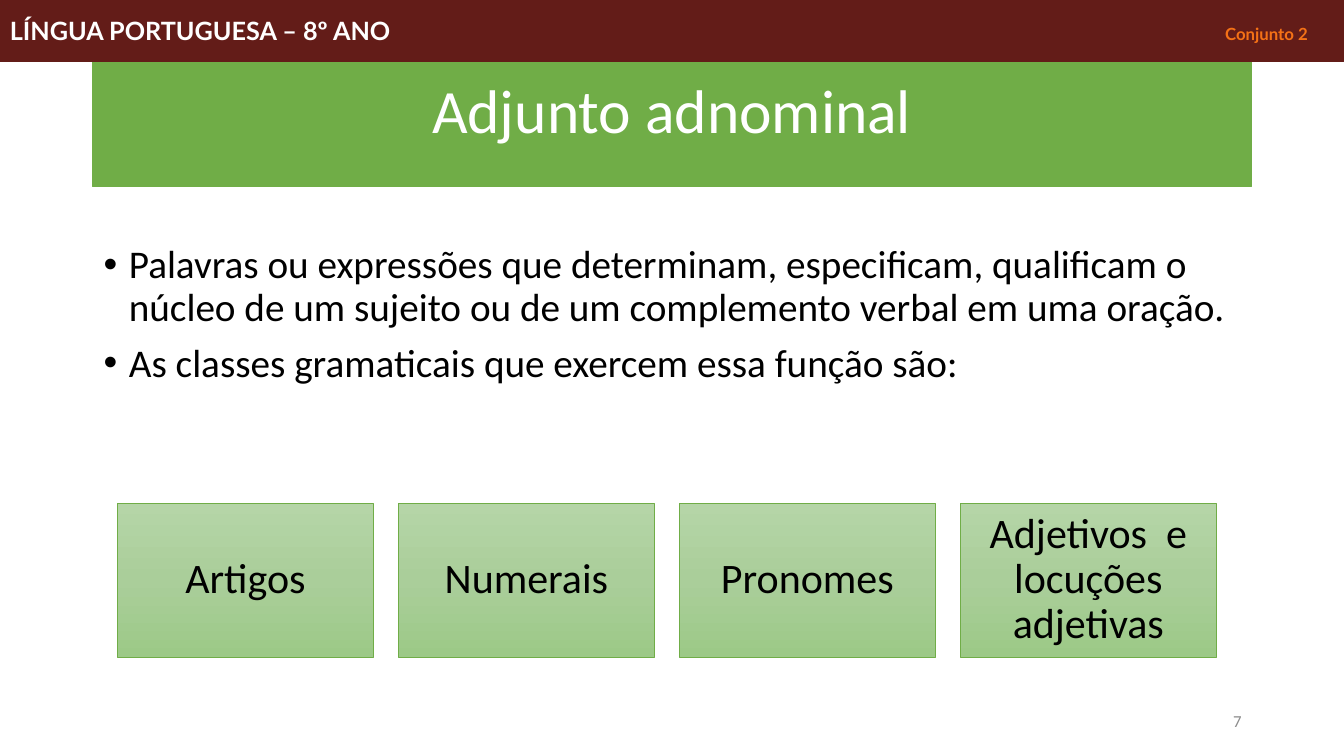
from copy import deepcopy
from dataclasses import dataclass

from lxml import etree
from pptx import Presentation
from pptx.dml.color import RGBColor
from pptx.enum import shapes, text
from pptx.oxml.ns import qn
from pptx.util import Pt

ALIGN = text.PP_ALIGN
ANCHOR = text.MSO_ANCHOR


@dataclass(frozen=True)
class Theme:
    font: str = "Calibri"
    header_font: str = "Lato"
    green: str = "70AD47"
    card_gradient: tuple = ("B5D5A7", "AACE9A", "9CC987")
    maroon: str = "631C18"
    orange: str = "F47116"
    white: str = "FFFFFF"
    black: str = "000000"
    grey: str = "8C8C8C"
    title_size: float = 44
    card_size: float = 30
    body_size: float = 28
    header_size: float = 18
    small_size: float = 12


@dataclass(frozen=True)
class Box:
    left: float
    top: float
    width: float
    height: float

    def points(self) -> tuple:
        return Pt(self.left), Pt(self.top), Pt(self.width), Pt(self.height)


THEME = Theme()
TITLE = Box(66, 28.8, 828, 104.4)
BODY = Box(67, 171.4, 828, 166.3)
FIRST_CARD = Box(84, 359.2, 182.7, 110)
CARD_PITCH = 200.7
PAGE_NUMBER = Box(678, 500.4, 216, 28.8)
HEADER = Box(0, 0, 960, 44)
SET_LABEL_TAB = 868

BULLETS = (
    "Palavras ou expressões que determinam, especificam, qualificam o "
    "núcleo de um sujeito ou de um complemento verbal em uma oração.",
    "As classes gramaticais que exercem essa função são:",
)
WORD_CLASSES = ("Artigos", "Numerais", "Pronomes", "Adjetivos  e locuções adjetivas")


def rgb(color: str) -> RGBColor:
    return RGBColor.from_string(color)


def add_run(p, words: str, size: float, color: str,
            font: str = THEME.font, bold: bool = False) -> None:
    r = p.add_run()
    r.text = words
    r.font.name = font
    r.font.size = Pt(size)
    r.font.bold = bold
    r.font.color.rgb = rgb(color)


def prepare_text(sp, anchor, align, spacing: float = 1):
    """Set up a shape's text frame and return its first paragraph."""
    tf = sp.text_frame
    tf.word_wrap = True
    tf.auto_size = text.MSO_AUTO_SIZE.NONE
    tf.vertical_anchor = anchor
    p = tf.paragraphs[0]
    p.alignment = align
    p.line_spacing = spacing
    return p


def paint(sp, color: str, line_width: float) -> None:
    sp.fill.solid()
    sp.fill.fore_color.rgb = rgb(color)
    sp.line.color.rgb = rgb(color)
    sp.line.width = Pt(line_width)


def add_rectangle(slide, box: Box):
    sp = slide.shapes.add_shape(shapes.MSO_SHAPE.RECTANGLE, *box.points())
    sp.shadow.inherit = False
    return sp


def fill_card_gradient(sp) -> None:
    sp.fill.gradient()
    sp.fill.gradient_angle = 270
    first = sp._element.spPr.find(".//" + qn("a:gs"))
    middle = deepcopy(first)
    first.addnext(middle)
    colors = THEME.card_gradient
    for i, (stop, color) in enumerate(zip(sp.fill.gradient_stops, colors)):
        stop.position = i / (len(colors) - 1)
        stop.color.rgb = rgb(color)


def add_title(slide) -> None:
    sp = slide.shapes.title
    sp.left, sp.top, sp.width, sp.height = TITLE.points()
    paint(sp, THEME.green, 1)
    p = prepare_text(sp, ANCHOR.MIDDLE, ALIGN.CENTER, 0.9)
    add_run(p, "Adjunto adnominal", THEME.title_size, THEME.white)


def add_bullets(slide) -> None:
    sp = slide.shapes.add_textbox(*BODY.points())
    for i, words in enumerate(BULLETS):
        if i == 0:
            p = prepare_text(sp, ANCHOR.TOP, ALIGN.LEFT, 0.9)
        else:
            p = sp.text_frame.add_paragraph()
            p.line_spacing = 0.9
        p.space_before = Pt(10)
        pPr = p._p.get_or_add_pPr()
        pPr.set("marL", str(Pt(18)))
        pPr.set("indent", str(-Pt(18)))
        etree.SubElement(pPr, qn("a:buFont")).set("typeface", "Arial")
        etree.SubElement(pPr, qn("a:buChar")).set("char", "•")
        add_run(p, words, THEME.body_size, THEME.black)


def add_card(slide, index: int, words: str) -> None:
    box = Box(FIRST_CARD.left + index * CARD_PITCH, FIRST_CARD.top,
              FIRST_CARD.width, FIRST_CARD.height)
    sp = add_rectangle(slide, box)
    fill_card_gradient(sp)
    sp.line.color.rgb = rgb(THEME.green)
    sp.line.width = Pt(0.5)
    tf = sp.text_frame
    tf.margin_left = tf.margin_right = tf.margin_top = tf.margin_bottom = Pt(9)
    p = prepare_text(sp, ANCHOR.MIDDLE, ALIGN.CENTER, 0.9)
    add_run(p, words, THEME.card_size, THEME.black)


def add_page_number(slide) -> None:
    sp = slide.shapes.add_textbox(*PAGE_NUMBER.points())
    p = prepare_text(sp, ANCHOR.MIDDLE, ALIGN.RIGHT)
    add_run(p, "7", THEME.small_size, THEME.grey)


def add_header(slide) -> None:
    sp = add_rectangle(slide, HEADER)
    paint(sp, THEME.maroon, 0.75)
    p = prepare_text(sp, ANCHOR.MIDDLE, ALIGN.LEFT)
    tabs = etree.SubElement(p._p.get_or_add_pPr(), qn("a:tabLst"))
    tab = etree.SubElement(tabs, qn("a:tab"))
    tab.set("pos", str(Pt(SET_LABEL_TAB)))
    tab.set("algn", "l")
    add_run(p, "LÍNGUA PORTUGUESA – 8º ANO\t", THEME.header_size, THEME.white,
            THEME.header_font, True)
    add_run(p, "Conjunto 2", THEME.small_size, THEME.orange,
            THEME.header_font, True)


def main() -> None:
    prs = Presentation()
    prs.slide_width, prs.slide_height = Pt(960), Pt(540)
    slide = prs.slides.add_slide(prs.slide_layouts.get_by_name("Title Only"))
    add_title(slide)
    add_bullets(slide)
    for i, words in enumerate(WORD_CLASSES):
        add_card(slide, i, words)
    add_page_number(slide)
    add_header(slide)
    prs.save("out.pptx")


if __name__ == "__main__":
    main()
